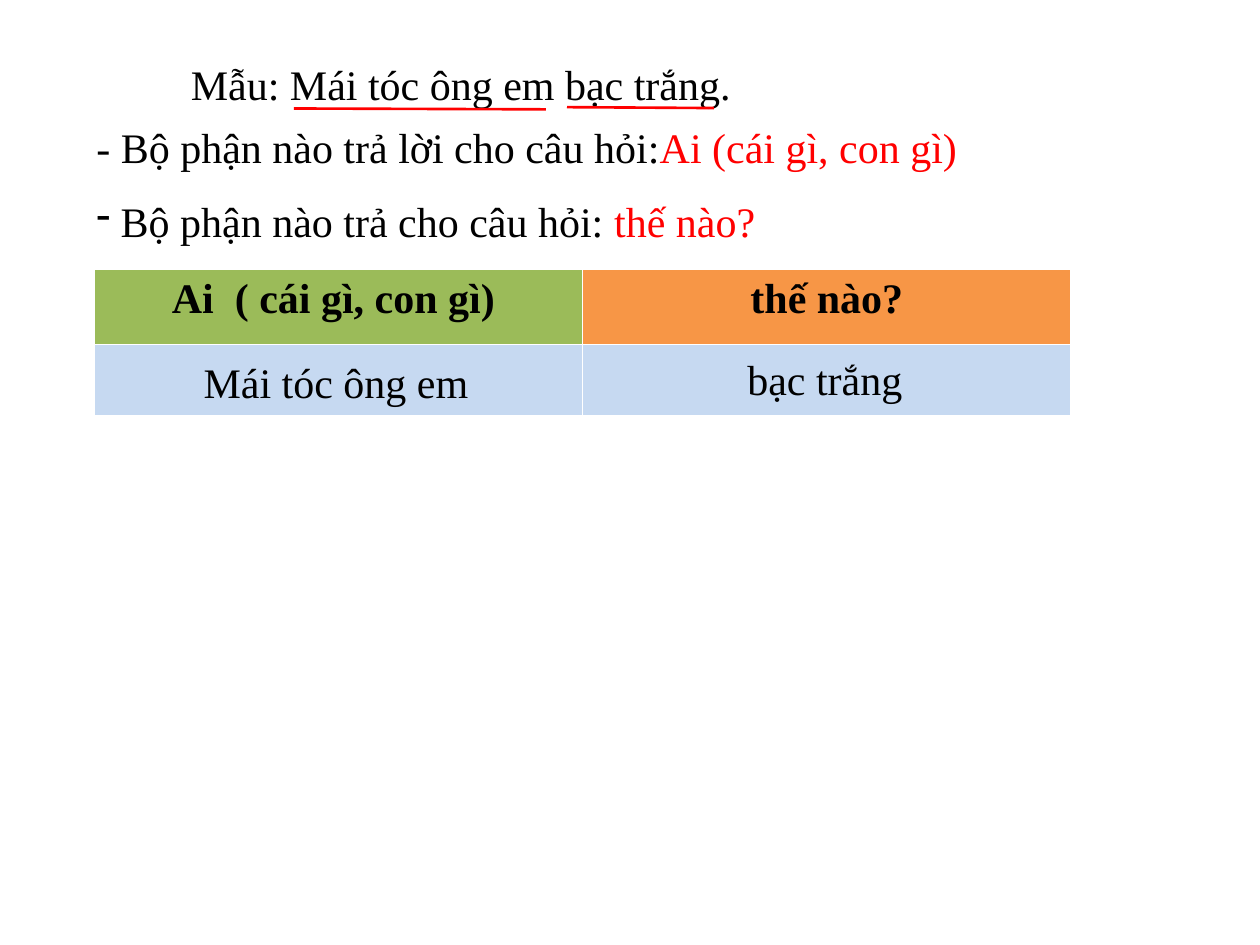
"""Build a Vietnamese grammar slide with a model sentence, two questions and an answer table."""
from lxml import etree
from pptx import Presentation
from pptx.dml.color import RGBColor
from pptx.enum.shapes import MSO_CONNECTOR
from pptx.enum.text import PP_ALIGN
from pptx.oxml.ns import qn
from pptx.util import Pt

COLORS = {"text": "000000", "accent": "FF0000", "who": "9BBB59", "how": "F79646", "answer": "C6D9F1"}
FONT, SIZE = "Times New Roman", 24

TEXTS = [
    {"box": (102, 30, 480, 36), "runs": [("Mẫu: Mái tóc ông em bạc trắng.", "text")]},
    {"box": (48, 66, 534, 58),
     "runs": [("- Bộ phận nào trả lời cho câu hỏi:", "text"), ("Ai (cái gì, con gì)", "accent")]},
    {"box": (48, 108, 468, 36), "bullet": "-",
     "runs": [(" Bộ phận nào trả cho câu hỏi: ", "text"), ("thế nào?", "accent")]},
    {"box": (54, 200, 276, 36), "align": PP_ALIGN.CENTER, "runs": [("Mái tóc ông em", "text")]},
    {"box": (336, 195, 252, 41), "top": 7.2, "indent": 84, "runs": [("bạc trắng", "text")]},
]
UNDERLINES = [(168, 62, 312, 62.5), (324, 61.25, 408, 61.75)]
HEADERS = [("Ai  ( cái gì, con gì) ", "who"), ("thế nào?", "how")]
TABLE_LEFT, TABLE_TOP, COLUMN_WIDTH = 54, 154, 279
ROW_HEIGHTS = [43, 40.5]


def color(name):
    return RGBColor.from_string(COLORS[name])


def set_font(paragraph, bold=False):
    paragraph.font.name, paragraph.font.size, paragraph.font.bold = FONT, Pt(SIZE), bold


def add_text(slide, box, runs, align=PP_ALIGN.LEFT, bullet=None, indent=0, top=3.6):
    frame = slide.shapes.add_textbox(*map(Pt, box)).text_frame
    frame.word_wrap = True
    frame.margin_top = Pt(top)
    line = frame.paragraphs[0]
    line.alignment = align
    set_font(line)
    properties = line._p.get_or_add_pPr()
    if indent:
        properties.set("marL", str(Pt(indent)))
    if bullet:
        mark = etree.Element(qn("a:buChar"), char=bullet)
        properties.insert(0, mark)
    for wording, tone in runs:
        run = line.add_run()
        run.text = wording
        run.font.color.rgb = color(tone)


def add_underline(slide, ends):
    underline = slide.shapes.add_connector(MSO_CONNECTOR.STRAIGHT, *map(Pt, ends))
    underline.line.color.rgb = color("accent")
    underline.line.width = Pt(1.5)
    etree.SubElement(underline._element.spPr, qn("a:effectLst"))


def add_answer_table(slide):
    table = slide.shapes.add_table(
        len(ROW_HEIGHTS), len(HEADERS), Pt(TABLE_LEFT), Pt(TABLE_TOP),
        Pt(COLUMN_WIDTH * len(HEADERS)), Pt(sum(ROW_HEIGHTS))).table
    for row, height in zip(table.rows, ROW_HEIGHTS):
        row.height = Pt(height)
    for column, (title, tone) in enumerate(HEADERS):
        header, answer = table.cell(0, column), table.cell(1, column)
        for cell, fill in ((header, tone), (answer, "answer")):
            cell.fill.solid()
            cell.fill.fore_color.rgb = color(fill)
        header.text = title
        heading = header.text_frame.paragraphs[0]
        heading.alignment = PP_ALIGN.CENTER
        set_font(heading, bold=True)
        heading.font.color.rgb = color("text")


def main():
    deck = Presentation()
    deck.slide_width, deck.slide_height = Pt(720), Pt(540)
    slide = deck.slides.add_slide(deck.slide_layouts[6])
    add_answer_table(slide)
    for text in TEXTS:
        add_text(slide, **text)
    for ends in UNDERLINES:
        add_underline(slide, ends)
    deck.save("out.pptx")


if __name__ == "__main__":
    main()
